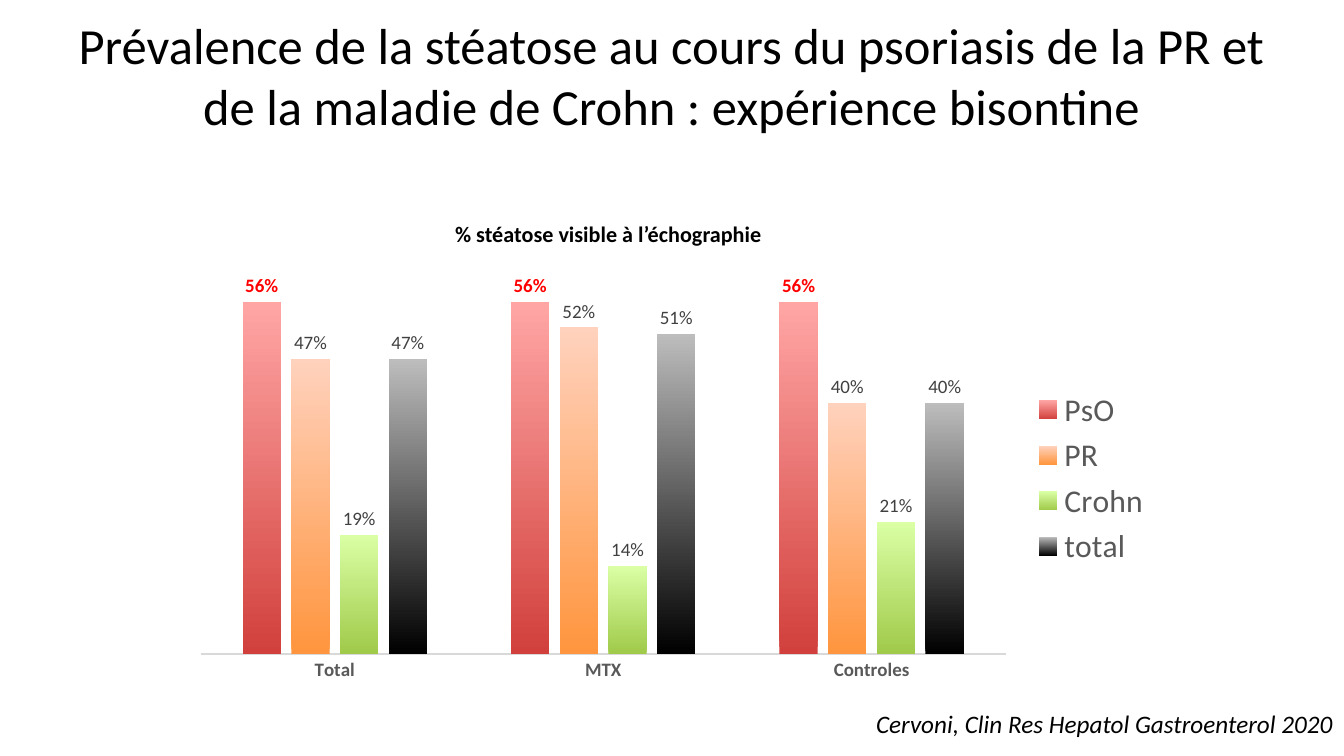
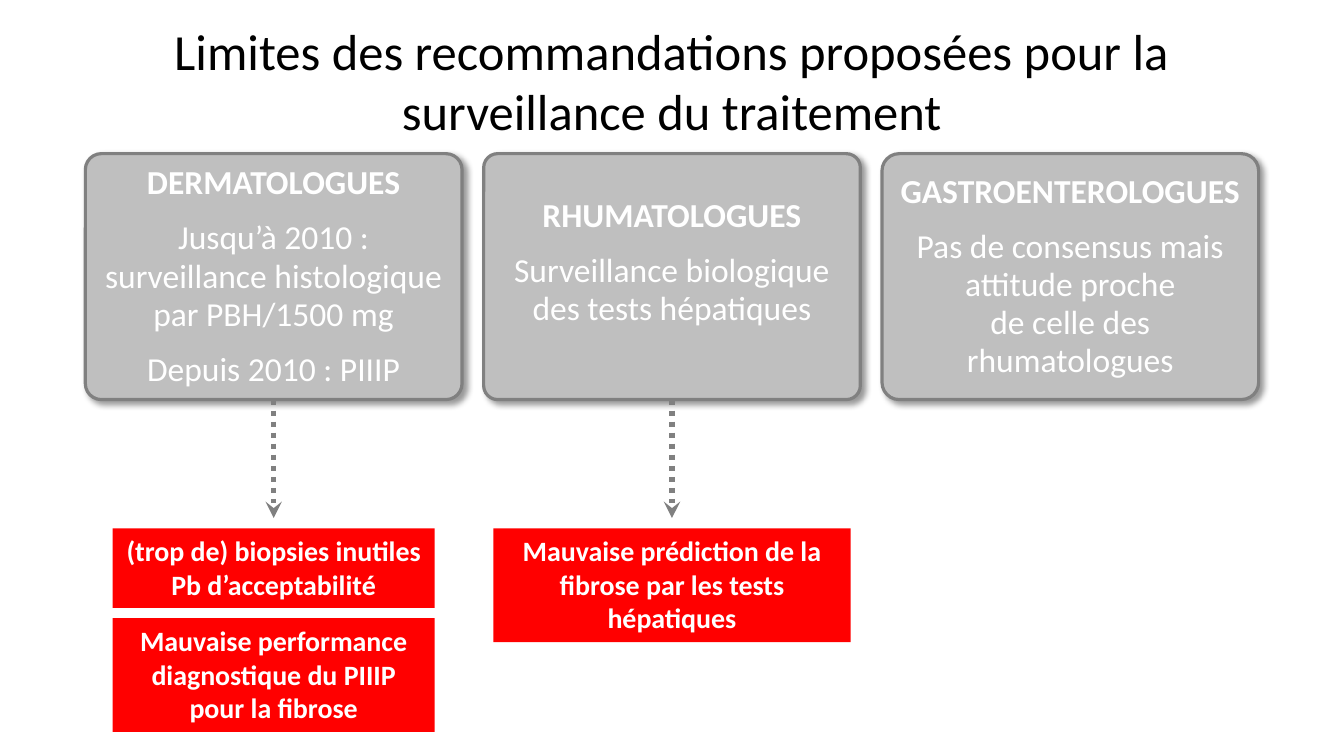
from lxml import etree
from pptx import Presentation
from pptx.chart.data import CategoryChartData
from pptx.dml.color import RGBColor
from pptx.enum.chart import XL_CHART_TYPE, XL_LABEL_POSITION, XL_LEGEND_POSITION, XL_TICK_MARK
from pptx.enum.dml import MSO_LINE
from pptx.enum.shapes import MSO_CONNECTOR, MSO_SHAPE
from pptx.enum.text import MSO_ANCHOR, MSO_AUTO_SIZE, PP_ALIGN
from pptx.oxml.ns import qn
from pptx.util import Inches, Pt

# Content
CHART_TITLE = "Prévalence de la stéatose au cours du psoriasis de la PR et de la maladie de Crohn : expérience bisontine"
CHART_HEADING = "% stéatose visible à l’échographie"
CITATION = "Cervoni, Clin Res Hepatol Gastroenterol 2020"
GROUPS = ["Total", "MTX", "Controles"]
SERIES = [  # name, values, bottom colour, top colour, label format
    ("PsO", (0.56, 0.56, 0.56), "D1403C", "FFA6A5", dict(color="FF0000", bold=True)),
    ("PR", (0.47, 0.52, 0.4), "FF953E", "FFD2BD", {}),
    ("Crohn", (0.19, 0.14, 0.21), "A0CA4A", "DAFFA5", {}),
    ("total", (0.47, 0.51, 0.4), "000000", "BDBDBD", {}),
]
LIMITS_TITLE = "Limites des recommandations proposées pour la surveillance du traitement"
SPECIALTIES = [  # card paragraphs, corner, bottom inset, width of limits, limits (height, wrap, lines)
    (["DERMATOLOGUES", "Jusqu’à 2010 : surveillance histologique par PBH/1500 mg",
      "Depuis 2010 : PIIIP"], 0.065, 0.03, 2.83,
     [(0.7, False, ["(trop de) biopsies inutiles", "Pb d’acceptabilité"]),
      (1, True, ["Mauvaise performance diagnostique du PIIIP pour la fibrose"])]),
    (["RHUMATOLOGUES", "Surveillance biologique des tests hépatiques"], 0.057, 0.27, 3.14,
     [(1, True, ["Mauvaise prédiction de la fibrose par les tests hépatiques"])]),
    (["GASTROENTEROLOGUES", "Pas de consensus mais attitude proche\vde celle des rhumatologues"],
     0.07, 0.03, 0, []),
]

# Shared style
FONT = "Calibri"
BLACK, WHITE, GREY, LABEL = "000000", "FFFFFF", "808080", "404040"
CARD, LIMIT, AXIS, RULE = "BFBFBF", "FF0000", "595959", "D9D9D9"
WIDTH, HEIGHT = 11.81, 6.64
TITLE_W, TITLE_H = 10.75, 0.81

prs = Presentation()
prs.slide_width, prs.slide_height = Inches(WIDTH), Inches(HEIGHT)


def rgb(value):
    return RGBColor.from_string(value)


def set_font(font, size, color=BLACK, **extra):
    font.color.rgb = rgb(color)
    for name, value in dict(name=FONT, size=Pt(size), **extra).items():
        setattr(font, name, value)


def write(tf, lines, size, color=BLACK, align=PP_ALIGN.LEFT, **extra):
    """Fill a frame with one paragraph per line and return the paragraphs."""
    for i, line in enumerate(lines):
        p = tf.paragraphs[0] if i == 0 else tf.add_paragraph()
        p.text, p.alignment = line, align
        for r in p.runs:
            set_font(r.font, size, color, **extra)
    return tf.paragraphs


def new_slide(title, top):
    s = prs.slides.add_slide(prs.slide_layouts[5])
    sp = s.shapes.title
    place = ((WIDTH - TITLE_W) / 2, top, TITLE_W, TITLE_H)
    sp.left, sp.top, sp.width, sp.height = map(Inches, place)
    tf = sp.text_frame
    tf.auto_size, tf.vertical_anchor = MSO_AUTO_SIZE.NONE, MSO_ANCHOR.MIDDLE
    write(tf, [title], 32, align=PP_ALIGN.CENTER)
    return s


def add_label(s, place, text, size, **extra):
    tf = s.shapes.add_textbox(*map(Inches, place)).text_frame
    tf.word_wrap = False
    write(tf, [text], size, **extra)


def add_box(s, kind, place, fill):
    sp = s.shapes.add_shape(kind, *map(Inches, place))
    sp.shadow.inherit = False
    sp.fill.solid()
    sp.fill.fore_color.rgb = rgb(fill)
    sp.line.fill.background()
    sp.text_frame.word_wrap = True
    return sp


def add_card(s, place, lines, corner, bottom):
    sp = add_box(s, MSO_SHAPE.ROUNDED_RECTANGLE, place, CARD)
    sp.adjustments[0] = corner
    sp.line.color.rgb, sp.line.width = rgb(GREY), Pt(2)
    effects = sp._element.spPr.find(qn("a:effectLst"))
    shadow = etree.SubElement(effects, qn("a:outerShdw"), blurRad=str(Pt(4)), dist=str(Pt(3)),
                              dir=str(45 * 60000), algn="tl", rotWithShape="0")
    black = etree.SubElement(shadow, qn("a:srgbClr"), val=BLACK)
    etree.SubElement(black, qn("a:alpha"), val="40000")
    tf = sp.text_frame
    tf.vertical_anchor = MSO_ANCHOR.MIDDLE
    tf.margin_left = tf.margin_right = tf.margin_top = Inches(0.03)
    tf.margin_bottom = Inches(bottom)
    paragraphs = write(tf, lines, 21.2, WHITE, PP_ALIGN.CENTER)
    for p in paragraphs:
        p.line_spacing = 0.95
    for p in paragraphs[:-1]:
        p.space_after = Pt(10.6)
    paragraphs[0].runs[0].font.bold = True


def add_arrow(s, x, top, bottom):
    line = s.shapes.add_connector(MSO_CONNECTOR.STRAIGHT, *map(Inches, (x, top, x, bottom)))
    line.line.color.rgb, line.line.width = rgb(GREY), Pt(3.5)
    line.line.dash_style = MSO_LINE.ROUND_DOT
    etree.SubElement(line.line._get_or_add_ln(), qn("a:tailEnd"), type="stealth")
    etree.SubElement(line._element.spPr, qn("a:effectLst"))


def add_prevalence_chart(s, place):
    data = CategoryChartData(number_format="0%")
    data.categories = GROUPS
    for name, values, *_ in SERIES:
        data.add_series(name, values)
    chart = s.shapes.add_chart(XL_CHART_TYPE.COLUMN_CLUSTERED, *map(Inches, place), data).chart
    chart.has_title = False
    set_font(chart.font, 10)

    # Axes and legend
    cat, val = chart.category_axis, chart.value_axis
    cat.major_tick_mark = XL_TICK_MARK.NONE
    cat.format.line.color.rgb, cat.format.line.width = rgb(RULE), Pt(0.75)
    set_font(cat.tick_labels.font, 12, AXIS, bold=True)
    val.visible = val.has_major_gridlines = False
    val.minimum_scale, val.maximum_scale = 0, 0.6
    chart.has_legend = True
    chart.legend.position, chart.legend.include_in_layout = XL_LEGEND_POSITION.RIGHT, False
    set_font(chart.legend.font, 20, AXIS)

    # Plot area, as shares of the chart
    area = chart._chartSpace.chart.plotArea
    for old in area.findall(qn("c:layout")):
        area.remove(old)
    layout = etree.Element(qn("c:layout"))
    area.insert(0, layout)
    manual = etree.SubElement(layout, qn("c:manualLayout"))
    for tag, value in dict(layoutTarget="inner", xMode="edge", yMode="edge",
                           x=0.02, y=0.02, w=0.82, h=0.9).items():
        etree.SubElement(manual, qn("c:" + tag), val=str(value))

    # Columns and their labels
    plot = chart.plots[0]
    plot.gap_width, plot.overlap, plot.vary_by_categories = 219, -27, False
    for series, (_, _, low, high, style) in zip(plot.series, SERIES):
        fill = series.format.fill
        fill.gradient()
        fill.gradient_angle = 90
        for stop, color, position in zip(fill.gradient_stops, (low, high), (0, 1)):
            stop.color.rgb, stop.position = rgb(color), position
        labels = series.data_labels
        labels.show_value, labels.position = True, XL_LABEL_POSITION.OUTSIDE_END
        labels.number_format, labels.number_format_is_linked = "0%", False
        set_font(labels.font, 12, **{"color": LABEL, **style})


def build_prevalence():
    s = new_slide(CHART_TITLE, 0.25)
    add_label(s, (7.6, 6.17, 4.26, 0.37), CITATION, 15.9, italic=True)
    add_prevalence_chart(s, (1.59, 2.36, 8.63, 3.68))
    add_label(s, (3.9, 1.89, 2.91, 0.34), CHART_HEADING, 14, bold=True)


def build_limits():
    s = new_slide(LIMITS_TITLE, 0.3)
    left, top, card_w, card_h, pitch = 0.75, 1.35, 3.31, 2.16, 3.5
    limit_top, gap = 4.64, 0.09
    for column, (lines, corner, bottom, limit_w, limits) in enumerate(SPECIALTIES):
        x = left + column * pitch
        center = x + card_w / 2
        add_card(s, (x, top, card_w, card_h), lines, corner, bottom)
        if limits:
            add_arrow(s, center, top + card_h, limit_top - gap)
        y = limit_top
        for height, wrap, text in limits:
            sp = add_box(s, MSO_SHAPE.RECTANGLE, (center - limit_w / 2, y, limit_w, height), LIMIT)
            sp.text_frame.word_wrap = wrap
            sp.text_frame.vertical_anchor = MSO_ANCHOR.TOP
            write(sp.text_frame, text, 17.7, WHITE, PP_ALIGN.CENTER, bold=True)
            y += height + gap


if __name__ == "__main__":
    build_prevalence()
    build_limits()
    prs.save("out.pptx")
